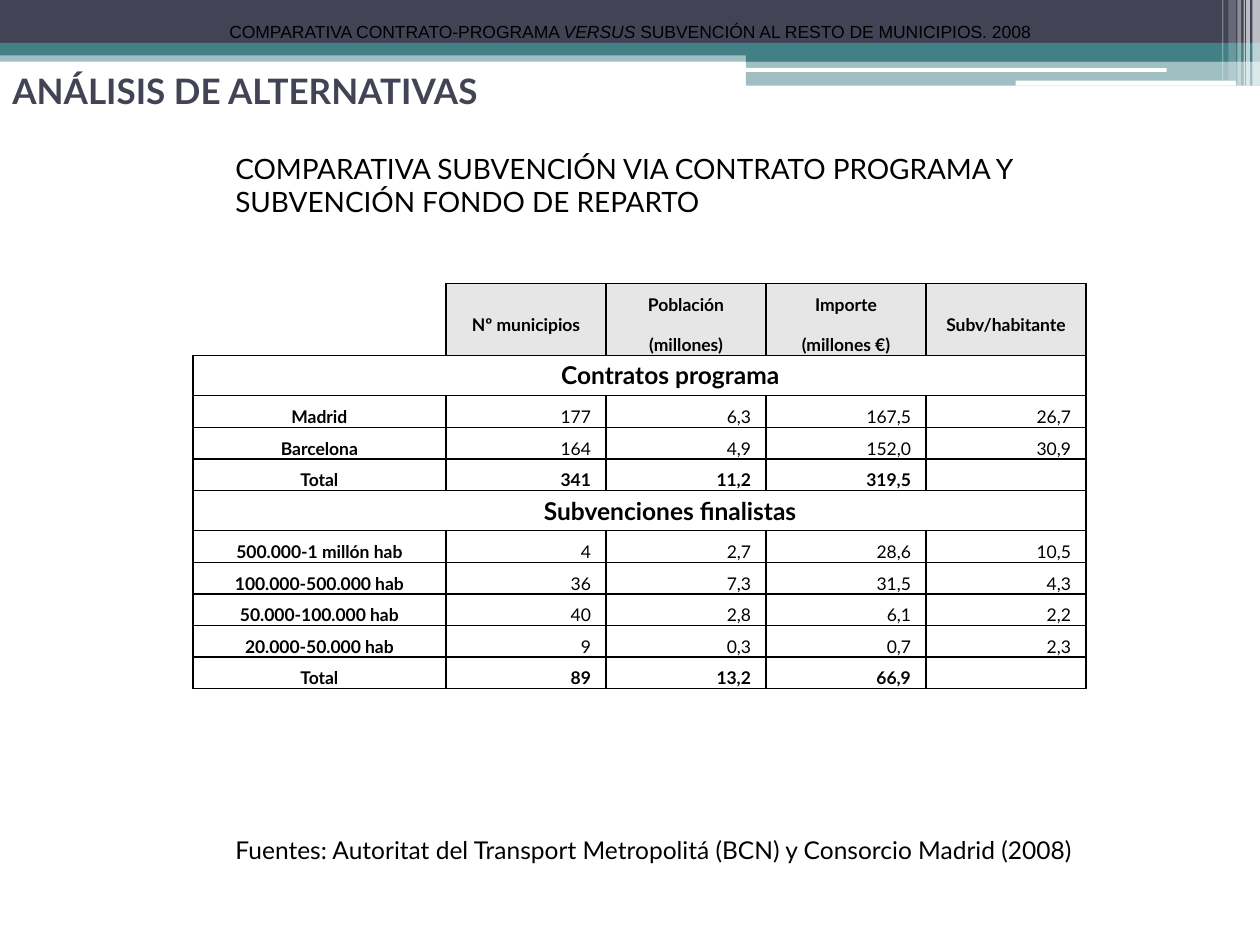
import lxml.etree
import pptx
import pptx.dml.color
import pptx.enum.shapes
import pptx.enum.text
import pptx.oxml.ns
import pptx.util

ALIGN = pptx.enum.text.PP_ALIGN
ANCHOR = pptx.enum.text.MSO_ANCHOR
SHAPES = pptx.enum.shapes.MSO_SHAPE
INK, SLATE, TEAL, WHITE, GREY = "000000", "424456", "438086", "FFFFFF", "E6E6E6"
NO_STYLE = "{2D5ABB26-0587-4C30-8999-92F81FD0307C}"


def color(hex_text):
    return pptx.dml.color.RGBColor.from_string(hex_text)


def add_xml(parent, tag, **attributes):
    return lxml.etree.SubElement(parent, pptx.oxml.ns.qn(tag), attributes)


class SlideBuilder:
    """Places elements on a slide grid of 100 columns by 75 rows."""

    font_name = "Lato"

    def __init__(self, presentation):
        self.column = presentation.slide_width / 100
        self.row = presentation.slide_height / 75
        self.slide = presentation.slides.add_slide(presentation.slide_layouts[6])

    def box(self, left, top, width, height):
        return (round(left * self.column), round(top * self.row),
                round(width * self.column), round(height * self.row))

    def style(self, paragraph, size, bold=False, ink=INK, font_name=None,
              align=ALIGN.LEFT):
        paragraph.alignment = align
        font = paragraph.font
        font.name = font_name or self.font_name
        font.size = pptx.util.Pt(size)
        font.bold = bold
        font.color.rgb = color(ink)

    def bar(self, left, top, width, height, fill, opacity=100, rounded=False):
        kind = SHAPES.ROUNDED_RECTANGLE if rounded else SHAPES.RECTANGLE
        shape = self.slide.shapes.add_shape(kind, *self.box(left, top, width, height))
        shape.shadow.inherit = False
        shape.line.fill.background()
        shape.fill.solid()
        shape.fill.fore_color.rgb = color(fill)
        if opacity < 100:
            fill_color = shape.fill._xPr.find(".//" + pptx.oxml.ns.qn("a:srgbClr"))
            add_xml(fill_color, "a:alpha", val=str(opacity * 1000))

    def text(self, left, top, width, height, runs, size, anchor=ANCHOR.TOP,
             wrap=True, **style):
        """Adds one paragraph; runs are (text, italic) pairs."""
        shape = self.slide.shapes.add_textbox(*self.box(left, top, width, height))
        frame = shape.text_frame
        frame.word_wrap = wrap
        frame.vertical_anchor = anchor
        paragraph = frame.paragraphs[0]
        self.style(paragraph, size, **style)
        for words, italic in runs:
            run = paragraph.add_run()
            run.text = words
            if italic:
                run.font.italic = True

    def table(self, left, top, widths, heights):
        frame = self.slide.shapes.add_table(
            len(heights), len(widths),
            *self.box(left, top, sum(widths), sum(heights)))
        table = frame.table
        table.first_row = table.horz_banding = False
        table._tbl.tblPr.find(pptx.oxml.ns.qn("a:tableStyleId")).text = NO_STYLE
        for column, width in zip(table.columns, widths):
            column.width = round(width * self.column)
        for row, height in zip(table.rows, heights):
            row.height = round(height * self.row)
        return table

    def cell(self, cell, words="", size=10, bold=True, align=ALIGN.CENTER,
             fill=None, sides="LRTB", spacing=1.5, indent=0,
             side_margins=(0.07, 0.07), end_margin=0):
        cell.vertical_anchor = ANCHOR.MIDDLE
        cell.margin_left, cell.margin_right = map(pptx.util.Inches, side_margins)
        cell.margin_top = cell.margin_bottom = pptx.util.Inches(end_margin)
        if fill:
            cell.fill.solid()
            cell.fill.fore_color.rgb = color(fill)
        else:
            cell.fill.background()
        # Borders come before the fill in the cell properties
        properties = cell._tc.get_or_add_tcPr()
        for position, side in enumerate(sides):
            line = add_xml(properties, "a:ln" + side, w="12700")
            add_xml(add_xml(line, "a:solidFill"), "a:srgbClr", val=INK)
            properties.insert(position, line)
        cell.text_frame.text = words
        for paragraph in cell.text_frame.paragraphs:
            self.style(paragraph, size, bold, align=align)
            paragraph.line_spacing = spacing
            paragraph.space_before = pptx.util.Pt(5)
            if indent:
                paragraph._p.get_or_add_pPr().set(
                    "indent", str(pptx.util.Inches(indent)))
            if not words:
                add_xml(paragraph._p, "a:endParaRPr", sz=str(size * 100))


HEADERS = ["Nº municipios", "Población\n(millones)", "Importe\n(millones €)",
           "Subv/habitante"]
ROWS = [
    ["Contratos programa"],
    ["Madrid", "177", "6,3", "167,5", "26,7"],
    ["Barcelona", "164", "4,9", "152,0", "30,9"],
    ["Total", "341", "11,2", "319,5", ""],
    ["Subvenciones finalistas"],
    ["500.000-1 millón hab", "4", "2,7", "28,6", "10,5"],
    ["100.000-500.000 hab", "36", "7,3", "31,5", "4,3"],
    ["50.000-100.000 hab", "40", "2,8", "6,1", "2,2"],
    ["20.000-50.000 hab", "9", "0,3", "0,7", "2,3"],
    ["Total", "89", "13,2", "66,9", ""],
]


def draw_banner(builder):
    # Full-width bands and the wider block on the right
    builder.bar(0, 4, 100, 0.9, TEAL, 50)
    builder.bar(0, 0, 100, 3.4, SLATE)
    builder.bar(0, 3.4, 100, 1, TEAL)
    builder.bar(59.2, 3.9, 40.8, 1, TEAL)
    builder.bar(59.2, 4.8, 40.8, 2, TEAL, 50)
    builder.bar(59.1, 5.4, 33.5, 0.3, WHITE, rounded=True)
    builder.bar(80.6, 6.4, 17.5, 0.4, WHITE, rounded=True)
    # Translucent vertical stripes in the corner
    for left, width, height, opacity in [
            (99.4, 0.6, 6.8, 65), (98.9, 0.3, 6.8, 65), (98.7, 0.1, 6.8, 60),
            (98.2, 0.3, 6.8, 40), (97.5, 0.6, 6.4, 20), (97, 0.1, 6.4, 30)]:
        builder.bar(left, 0, width, height, WHITE, opacity)


def draw_table(builder):
    heights = [5.7] + [3.2 if len(row) == 1 else 2.5 for row in ROWS]
    table = builder.table(15.3, 22.5, [20.1] + [12.7] * 4, heights)
    # Header row, with an open corner
    builder.cell(table.cell(0, 0), sides="RB")
    for column, words in enumerate(HEADERS, 1):
        builder.cell(table.cell(0, column), words, fill=GREY,
                     side_margins=(0.02, 0.02))
    # Section titles and figures
    for row, values in enumerate(ROWS, 1):
        if len(values) == 1:
            for column in range(1, 5):
                builder.cell(table.cell(row, column))
            table.cell(row, 0).merge(table.cell(row, 4))
            builder.cell(table.cell(row, 0), values[0], size=14, spacing=1,
                         indent=0.49, end_margin=0.04)
            continue
        builder.cell(table.cell(row, 0), values[0])
        for column, value in enumerate(values[1:], 1):
            builder.cell(table.cell(row, column), value, bold=values[0] == "Total",
                         align=ALIGN.RIGHT, indent=0.49, side_margins=(0.07, 0.12))


def main():
    presentation = pptx.Presentation()
    presentation.slide_width = pptx.util.Inches(10)
    presentation.slide_height = pptx.util.Inches(7.5)
    builder = SlideBuilder(presentation)

    draw_banner(builder)
    builder.text(0, 1.3, 90, 11.7, [("ANÁLISIS DE ALTERNATIVAS", False)], 20,
                 anchor=ANCHOR.MIDDLE, bold=True, ink=SLATE)
    draw_table(builder)

    # Subtitle, running head and sources
    builder.text(17.7, 11.5, 72.4, 6.4, [
        ("COMPARATIVA SUBVENCIÓN VIA CONTRATO PROGRAMA Y SUBVENCIÓN FONDO DE REPARTO",
         False)], 16)
    builder.text(0, 0, 100, 5, [
        ("COMPARATIVA CONTRATO-PROGRAMA ", False), ("VERSUS ", True),
        ("SUBVENCIÓN AL RESTO DE MUNICIPIOS. 2008", False)], 10,
        anchor=ANCHOR.MIDDLE, wrap=False, font_name="Arial", align=ALIGN.CENTER)
    builder.text(17.7, 65.8, 89.8, 3.4, [
        ("Fuentes: Autoritat del Transport Metropolitá (BCN) y Consorcio Madrid (2008)",
         False)], 14)

    presentation.save("out.pptx")


if __name__ == "__main__":
    main()
